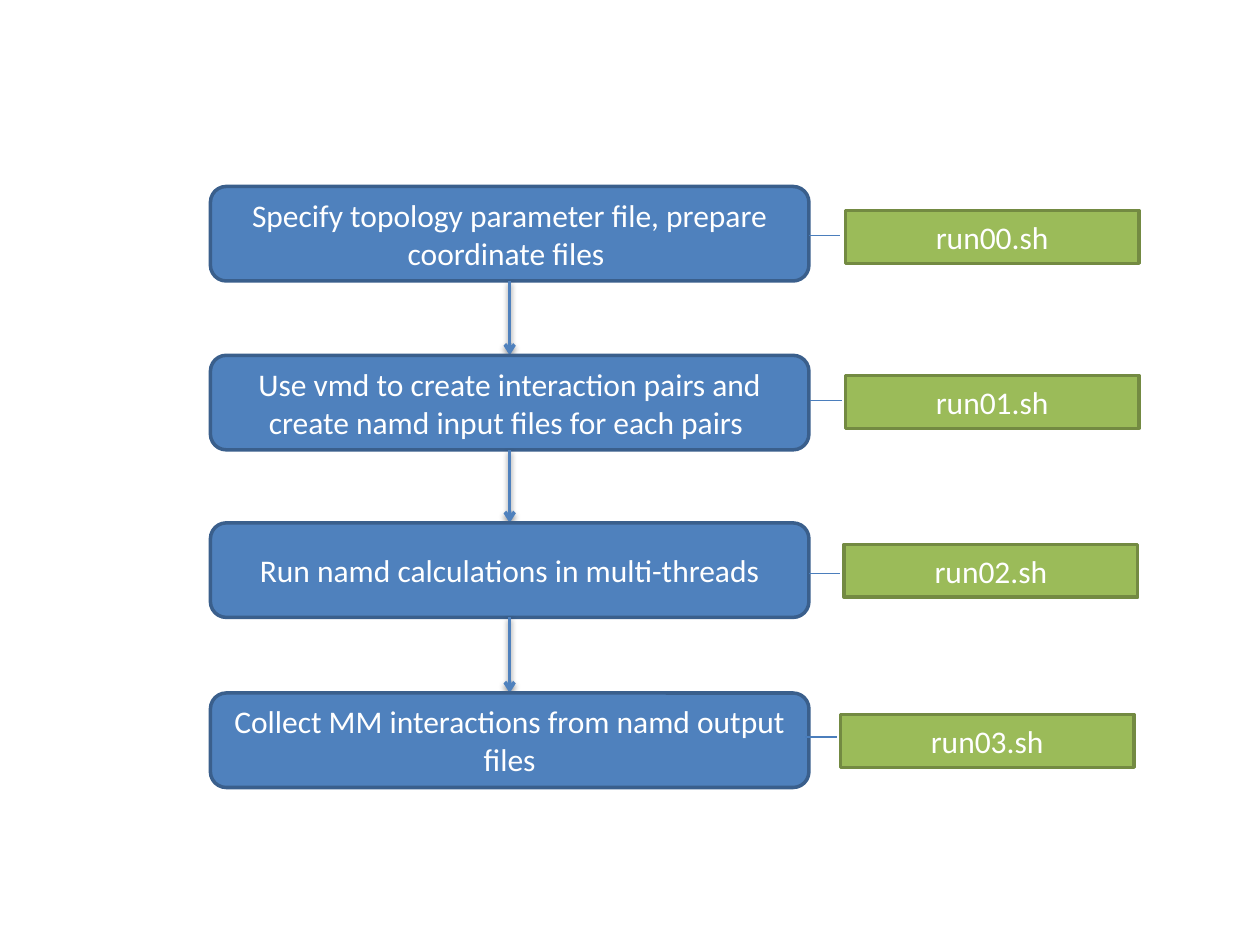
from lxml.etree import SubElement
from pptx import Presentation
from pptx.dml.color import RGBColor
from pptx.enum.shapes import MSO_CONNECTOR as CONNECTOR, MSO_SHAPE as SHAPE
from pptx.enum.text import MSO_ANCHOR as ANCHOR, PP_ALIGN as ALIGN
from pptx.oxml.ns import qn
from pptx.util import Inches, Pt

COLORS = {
    "step": "4F81BD",
    "step_line": "3A5F8C",
    "script": "9BBB59",
    "script_line": "738A42",
    "link": "4B7EBC",
    "text": "FFFFFF",
}
FONT = {"name": "Calibri", "size": Pt(18)}

STEP_LEFT, STEP_WIDTH, STEP_HEIGHT = 1.67, 4.75, 0.75
SCRIPT_WIDTH, SCRIPT_HEIGHT = 2.33, 0.42
LINK_LENGTH = 0.25

# Step text, step top, script name, script left and top, link left and height
STEPS = [
    ("Specify topology parameter file, prepare coordinate files ", 1.48,
     "run00.sh", 6.71, 1.67, 6.42, 1.87),
    ("Use vmd to create interaction pairs and create namd input files for each pairs ", 2.82,
     "run01.sh", 6.71, 2.98, 6.43, 3.18),
    ("Run namd calculations in multi-threads", 4.15,
     "run02.sh", 6.7, 4.32, 6.42, 4.55),
    ("Collect MM interactions from namd output files", 5.5,
     "run03.sh", 6.67, 5.67, 6.39, 5.85),
]


def rgb(name):
    return RGBColor.from_string(COLORS[name])


def add_box(slide, kind, color, text, left, top, width, height):
    """Add a filled, outlined shape with centred text."""
    shape = slide.shapes.add_shape(
        kind, Inches(left), Inches(top), Inches(width), Inches(height))
    shape.shadow.inherit = False
    shape.fill.solid()
    shape.fill.fore_color.rgb = rgb(color)
    shape.line.color.rgb = rgb(color + "_line")
    shape.line.width = Pt(2)

    frame = shape.text_frame
    frame.word_wrap = True
    frame.vertical_anchor = ANCHOR.MIDDLE
    paragraph = frame.paragraphs[0]
    paragraph.alignment = ALIGN.CENTER
    run = paragraph.add_run()
    run.text = text
    for attribute, value in FONT.items():
        setattr(run.font, attribute, value)
    run.font.color.rgb = rgb("text")
    return shape


def add_arrow(slide, upper, lower):
    """Join two steps with an arrow that keeps the theme shadow."""
    arrow = slide.shapes.add_connector(CONNECTOR.STRAIGHT, 0, 0, 0, 0)
    arrow.begin_connect(upper, 2)
    arrow.end_connect(lower, 0)
    arrow.line.color.rgb = rgb("step")
    arrow.line.width = Pt(2)
    SubElement(arrow.line._get_or_add_ln(), qn("a:tailEnd"), type="arrow")
    # The lower step covers the arrow tip
    arrow._element.addnext(lower._element)


def add_link(slide, left, y):
    """Add the thin line between a step and its script."""
    link = slide.shapes.add_connector(
        CONNECTOR.STRAIGHT, Inches(left), Inches(y), Inches(left + LINK_LENGTH), Inches(y))
    link.line.color.rgb = rgb("link")
    link.line.width = Pt(0.75)
    SubElement(link._element.spPr, qn("a:effectLst"))


def main():
    presentation = Presentation()
    presentation.slide_width = Inches(10)
    presentation.slide_height = Inches(7.5)
    slide = presentation.slides.add_slide(presentation.slide_layouts[6])

    # Workflow steps, top to bottom, each with its script
    previous = None
    for text, top, script, script_left, script_top, link_left, link_y in STEPS:
        step = add_box(slide, SHAPE.ROUNDED_RECTANGLE, "step", text,
                       STEP_LEFT, top, STEP_WIDTH, STEP_HEIGHT)
        if previous is not None:
            add_arrow(slide, previous, step)
        previous = step
        add_link(slide, link_left, link_y)
        add_box(slide, SHAPE.RECTANGLE, "script", script,
                script_left, script_top, SCRIPT_WIDTH, SCRIPT_HEIGHT)

    presentation.save("out.pptx")


if __name__ == "__main__":
    main()
